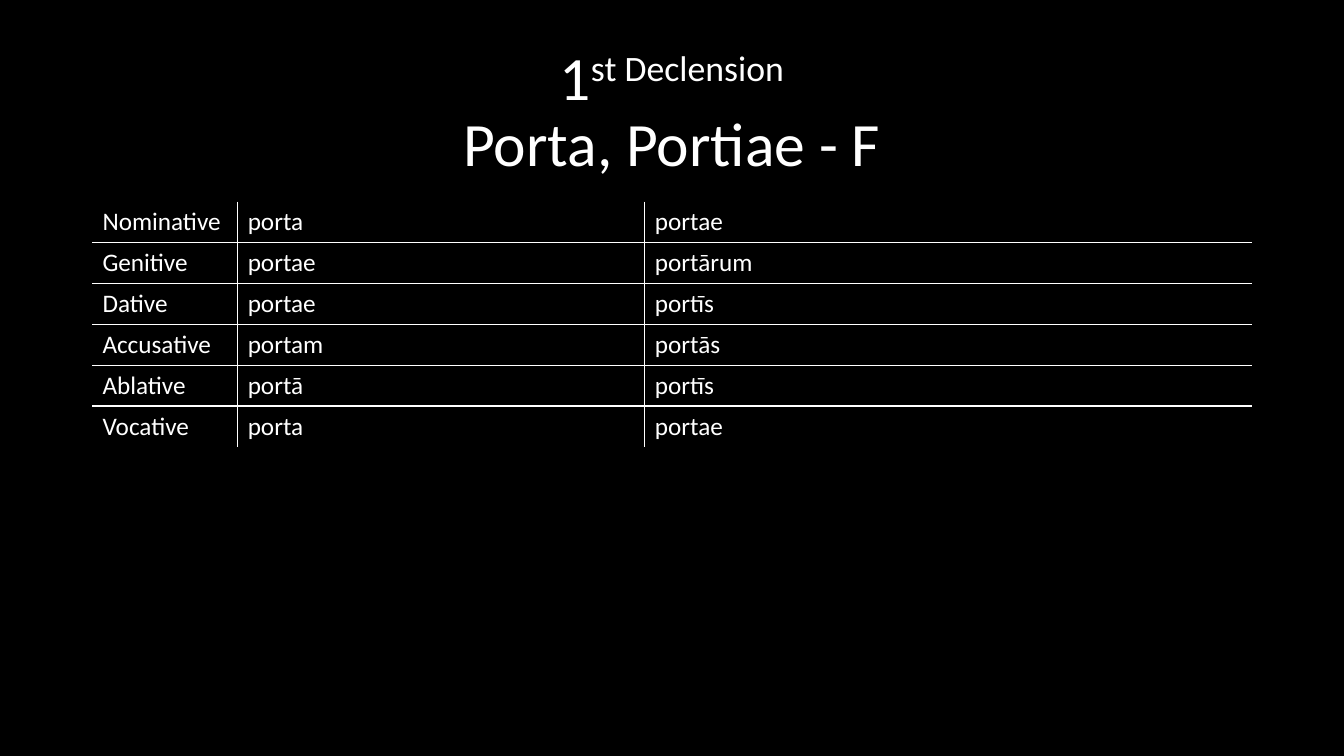
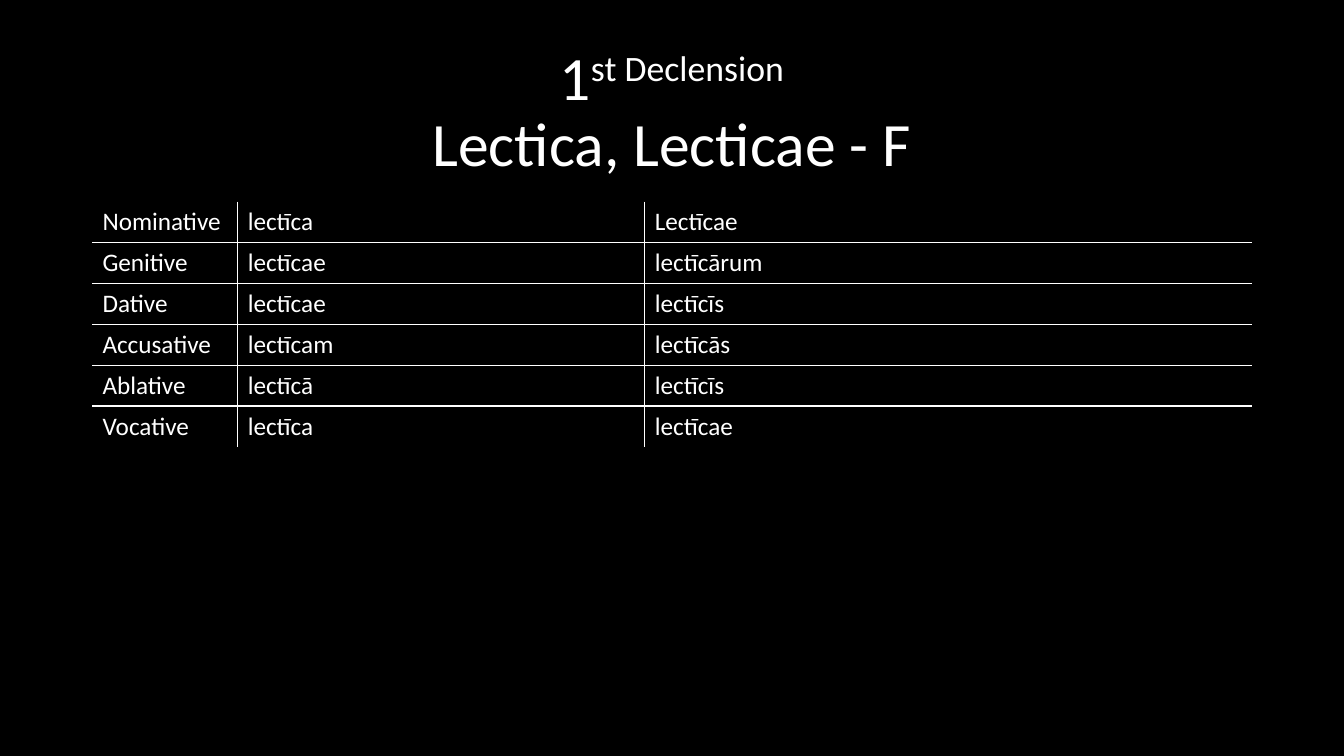
"""Build two slides of Latin first-declension noun tables."""
from dataclasses import dataclass

from pptx import Presentation
from pptx import util as u
from pptx.dml.color import RGBColor
from pptx.enum import text
from pptx.oxml.ns import qn
from lxml import etree


@dataclass(frozen=True)
class Theme:
    back: str = "000000"
    ink: str = "FFFFFF"
    font: str = "Calibri"
    title_size: int = 44
    body_size: int = 18
    rule: float = 1


THEME = Theme()
LEFT, WIDTH = 2.33, 29.21
COL_WIDTHS = (3.66, 10.26, 15.29)
ROW_HEIGHT = 1.03
CASES = ("Nominative", "Genitive", "Dative", "Accusative", "Ablative", "Vocative")
NOUNS = (
    ("Porta, Portiae - F",
     ("porta", "portae", "portae", "portam", "portā", "porta"),
     ("portae", "portārum", "portīs", "portās", "portīs", "portae")),
    ("Lectica, Lecticae - F",
     ("lectīca", "lectīcae", "lectīcae", "lectīcam", "lectīcā", "lectīca"),
     ("Lectīcae", "lectīcārum", "lectīcīs", "lectīcās", "lectīcīs", "lectīcae")),
)


def add_text(p, content, size=THEME.body_size, color=THEME.ink, raised=0):
    """Add a formatted run, raised by a percentage of its size."""
    r = p.add_run()
    r.text = content
    r.font.size = u.Pt(size)
    r.font.name = THEME.font
    r.font.color.rgb = RGBColor.from_string(color)
    if raised:
        r.font._element.set("baseline", str(raised * 1000))


def add_title(s, noun):
    """Add the two-line centred title."""
    sp = s.shapes.add_textbox(u.Cm(LEFT), u.Cm(1.02), u.Cm(WIDTH), u.Cm(3.68))
    tf = sp.text_frame
    tf.word_wrap = True
    tf.vertical_anchor = text.MSO_ANCHOR.MIDDLE
    p = tf.paragraphs[0]
    p.alignment = text.PP_ALIGN.CENTER
    p.line_spacing = 0.9
    add_text(p, "1", size=THEME.title_size)
    add_text(p, "st Declension", size=THEME.title_size, raised=30)
    p.add_line_break()
    add_text(p, noun, size=THEME.title_size)


def set_borders(cell, **sides):
    """Draw the sides that are true and clear the others."""
    tc_pr = cell._tc.get_or_add_tcPr()
    for side, shown in sides.items():
        ln = etree.SubElement(tc_pr, qn(f"a:ln{side}"), w=str(u.Pt(THEME.rule)))
        if shown:
            fill = etree.SubElement(ln, qn("a:solidFill"))
            etree.SubElement(fill, qn("a:srgbClr"), val=THEME.ink)
        else:
            etree.SubElement(ln, qn("a:noFill"))


def add_grid(s, rows):
    """Add a table ruled only between its cells."""
    n_rows, n_cols = len(rows), len(COL_WIDTHS)
    table = s.shapes.add_table(n_rows, n_cols, u.Cm(LEFT), u.Cm(5.08),
                               u.Cm(WIDTH), u.Cm(ROW_HEIGHT * n_rows)).table
    table.first_row = table.horz_banding = False
    for col, width in zip(table.columns, COL_WIDTHS):
        col.width = u.Cm(width)
    for i, row in enumerate(rows):
        for j, word in enumerate(row):
            cell = table.cell(i, j)
            add_text(cell.text_frame.paragraphs[0], word)
            set_borders(cell, L=j > 0, R=j < n_cols - 1, T=i > 0, B=i < n_rows - 1)
            cell.fill.solid()
            cell.fill.fore_color.rgb = RGBColor.from_string(THEME.back)


def add_declension(prs, noun, singular, plural):
    """Add one slide declining a noun."""
    s = prs.slides.add_slide(prs.slide_layouts[6])
    s.background.fill.solid()
    s.background.fill.fore_color.rgb = RGBColor.from_string(THEME.back)
    add_title(s, noun)
    add_grid(s, list(zip(CASES, singular, plural)))


def main():
    """Build and save the presentation."""
    prs = Presentation()
    prs.slide_width, prs.slide_height = u.Cm(33.87), u.Cm(19.05)
    for noun, singular, plural in NOUNS:
        add_declension(prs, noun, singular, plural)
    prs.save("out.pptx")


if __name__ == "__main__":
    main()
